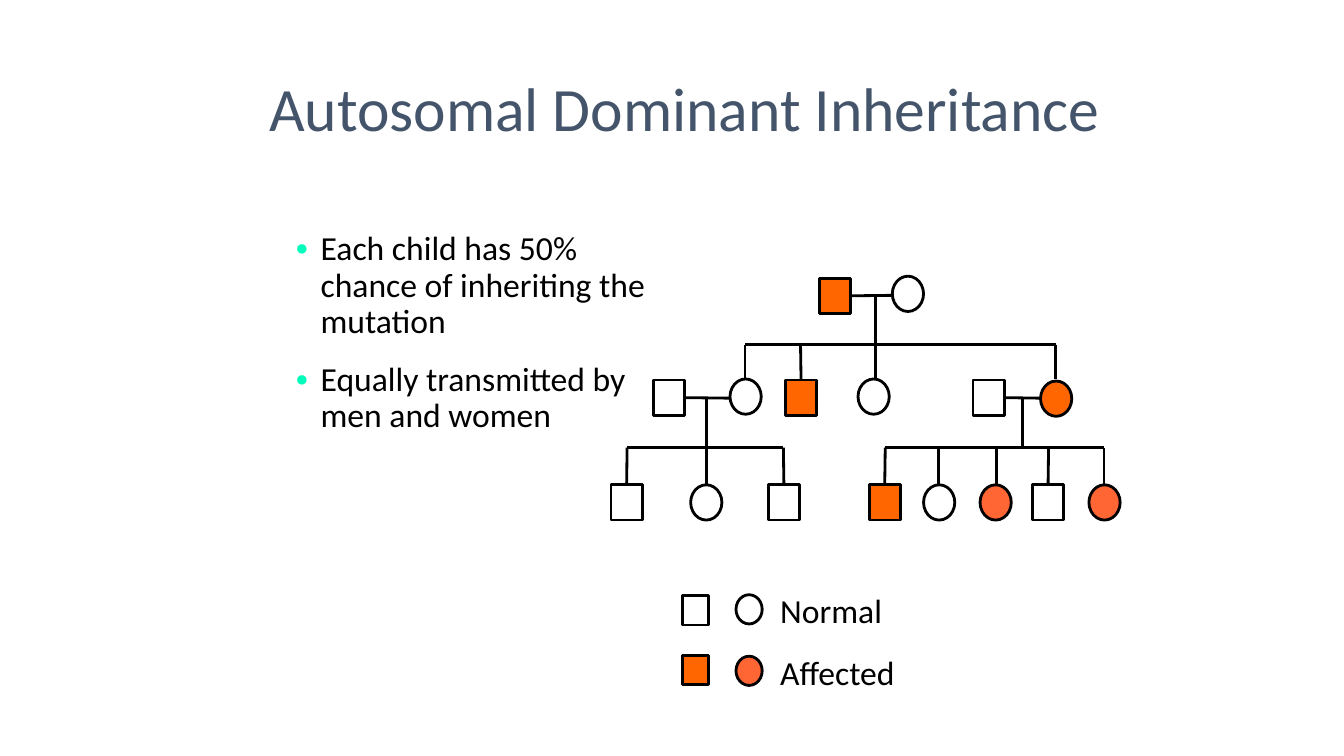
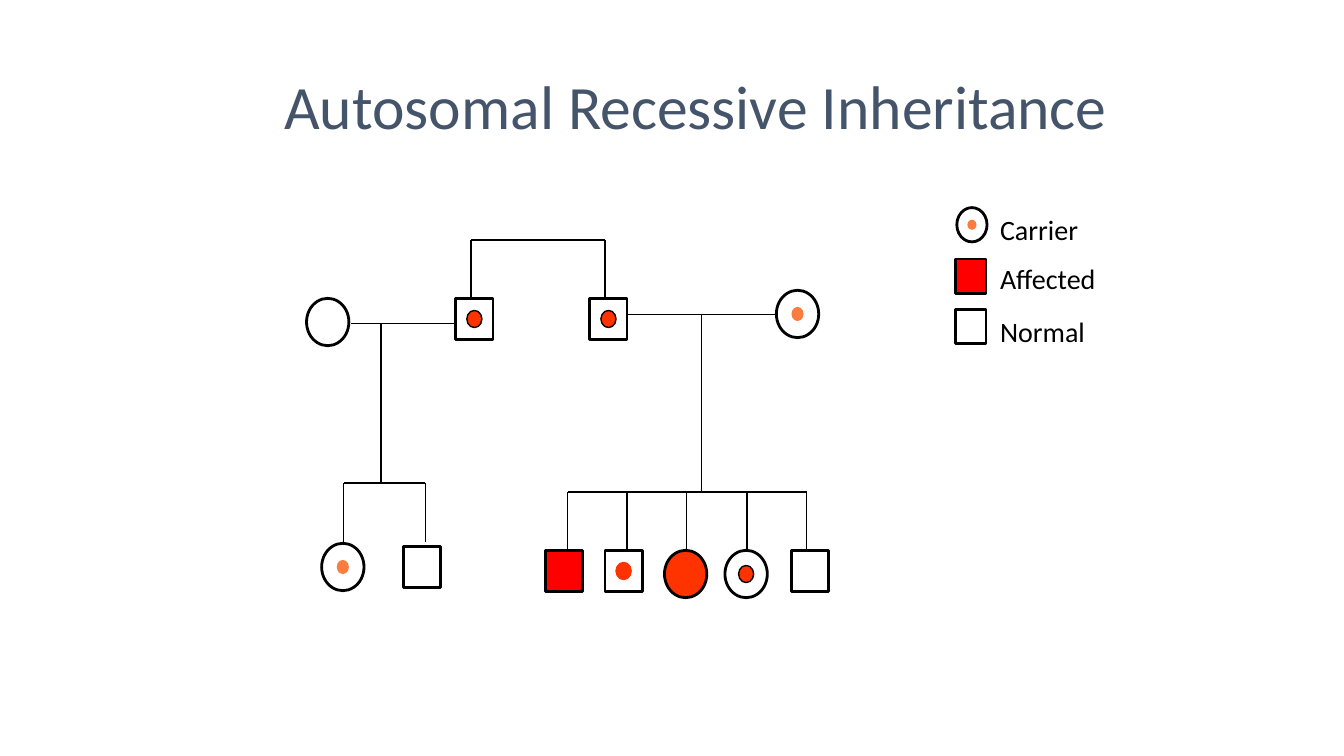
from dataclasses import dataclass
from math import hypot
from typing import Optional

from lxml import etree
from pptx import Presentation
from pptx.dml.color import RGBColor
from pptx.enum import shapes, text
from pptx.oxml import ns
from pptx.util import Inches, Pt

COLORS = {
    "title": "44546A", "ink": "000000", "bullet": "00FCBA",
    "orange": "FF6600", "coral": "FF6633", "red": "FF0000",
    "scarlet": "FF3300", "peach": "FC7B3F",
}
FONT = "Calibri"
SYMBOL_LINE = 2
SNAP = Inches(0.02)
TITLE_AND_CONTENT, TITLE_ONLY = 1, 5
SQUARE, CIRCLE = shapes.MSO_SHAPE.RECTANGLE, shapes.MSO_SHAPE.OVAL


@dataclass(frozen=True)
class Dot:
    width: float
    height: float
    fill: str
    line: Optional[str] = None


@dataclass(frozen=True)
class Person:
    kind: shapes.MSO_SHAPE
    x: float
    y: float
    fill: Optional[str] = None
    dot: Optional[Dot] = None


@dataclass(frozen=True)
class Family:
    """A bar with a drop to each child, and the parents' line and stem if any."""
    bar_y: float
    foot_y: float
    children: tuple[float, ...]
    couple: Optional[tuple[float, float]] = None
    couple_y: float = 0
    stem_x: float = 0


@dataclass(frozen=True)
class Label:
    words: str
    x: float
    y: float
    width: float
    height: float
    size: int


SMALL_DOT = Dot(0.12, 0.14, "peach")
KEY_DOT = Dot(0.09, 0.1, "peach")
RINGED_DOT = Dot(0.15, 0.17, "scarlet", "ink")
PLAIN_DOT = Dot(0.15, 0.17, "scarlet", "scarlet")

DOMINANT_PEOPLE = [
    Person(SQUARE, 8.13, 2.76, "orange"), Person(CIRCLE, 8.85, 2.74),
    Person(SQUARE, 6.48, 3.77), Person(CIRCLE, 7.24, 3.76),
    Person(SQUARE, 7.79, 3.77, "orange"), Person(CIRCLE, 8.51, 3.76),
    Person(SQUARE, 9.65, 3.77), Person(CIRCLE, 10.32, 3.78, "orange"),
    Person(SQUARE, 6.06, 4.81), Person(CIRCLE, 6.85, 4.81),
    Person(SQUARE, 7.62, 4.81), Person(SQUARE, 8.62, 4.81, "orange"),
    Person(CIRCLE, 9.16, 4.81), Person(CIRCLE, 9.72, 4.81, "coral"),
    Person(SQUARE, 10.24, 4.81), Person(CIRCLE, 10.8, 4.81, "coral"),
]
DOMINANT_KEY = [
    Person(SQUARE, 6.77, 5.91), Person(CIRCLE, 7.3, 5.9),
    Person(SQUARE, 6.77, 6.5, "orange"), Person(CIRCLE, 7.3, 6.51, "coral"),
]
DOMINANT_FAMILIES = [
    Family(3.42, 3.76, (7.39, 7.94, 8.68, 10.47), (8.44, 8.85), 2.93, 8.68),
    Family(4.44, 4.81, (6.22, 7.01, 7.77), (6.79, 7.24), 3.95, 7.01),
    Family(4.44, 4.81, (8.78, 9.31, 9.88, 10.4, 10.95),
           (9.96, 10.32), 3.95, 10.14),
]
DOMINANT_LABELS = [
    Label("Normal", 7.64, 5.8, 1.31, 0.5, 24),
    Label("Affected", 7.64, 6.42, 1.37, 0.5, 24),
]
DOMINANT_POINTS = [
    "Each child has 50% chance of inheriting the mutation",
    "Equally transmitted by men and women",
]

RECESSIVE_SQUARES = [
    Person(SQUARE, 4.52, 2.96, dot=RINGED_DOT),
    Person(SQUARE, 5.85, 2.96, dot=RINGED_DOT),
    Person(SQUARE, 4, 5.42), Person(SQUARE, 5.41, 5.46, "red"),
    Person(SQUARE, 6, 5.46, dot=PLAIN_DOT), Person(SQUARE, 7.85, 5.46),
]
RECESSIVE_CIRCLES = [
    Person(CIRCLE, 3.04, 2.96), Person(CIRCLE, 7.7, 2.88, dot=SMALL_DOT),
    Person(CIRCLE, 3.19, 5.39, dot=SMALL_DOT),
    Person(CIRCLE, 6.59, 5.46, "scarlet"),
    Person(CIRCLE, 7.19, 5.46, dot=RINGED_DOT),
]
RECESSIVE_KEY = [
    Person(CIRCLE, 9.49, 2.06, dot=KEY_DOT),
    Person(SQUARE, 9.48, 2.57, "red"), Person(SQUARE, 9.48, 3.07),
]
RECESSIVE_FAMILIES = [
    Family(2.38, 2.96, (4.67, 6)),
    Family(4.79, 5.38, (3.41, 4.22), (3.48, 4.52), 3.21, 3.78),
    Family(4.88, 5.46, (5.63, 6.22, 6.81, 7.41, 8), (6.22, 7.7), 3.12, 6.96),
]
RECESSIVE_LABELS = [
    Label("Carrier", 9.82, 2.06, 0.99, 0.43, 20),
    Label("Affected", 9.82, 2.55, 1.17, 0.43, 20),
    Label("Normal", 9.82, 3.07, 1.06, 0.43, 20),
]


def rgb(name: str) -> RGBColor:
    return RGBColor.from_string(COLORS[name])


def add_bullet(para, indent: float) -> None:
    props = para._p.get_or_add_pPr()
    props.set("marL", str(Inches(indent)))
    props.set("indent", str(-Inches(indent)))
    color = etree.SubElement(props, ns.qn("a:buClr"))
    etree.SubElement(color, ns.qn("a:srgbClr"), val=COLORS["bullet"])
    etree.SubElement(props, ns.qn("a:buSzPct"), val="65000")
    etree.SubElement(props, ns.qn("a:buChar"), char="●")


def write(box, lines: list[str], *, size: int, color: str = "ink",
          anchor=text.MSO_ANCHOR.TOP, spacing: float = 1.0,
          before: float = 0, bullets: bool = False) -> None:
    frame = box.text_frame
    frame.word_wrap = True
    frame.auto_size = text.MSO_AUTO_SIZE.NONE
    frame.vertical_anchor = anchor
    for index, line in enumerate(lines):
        para = frame.add_paragraph() if index else frame.paragraphs[0]
        para.alignment = text.PP_ALIGN.LEFT
        para.line_spacing = spacing
        para.space_before = Pt(before)
        if bullets:
            add_bullet(para, 0.25)
        span = para.add_run()
        span.text = line
        span.font.name = FONT
        span.font.size = Pt(size)
        span.font.color.rgb = rgb(color)


def place(box, x: float, y: float, width: float, height: float) -> None:
    box.left, box.top = Inches(x), Inches(y)
    box.width, box.height = Inches(width), Inches(height)


def add_page(deck, layout: int, title: str, x: float, y: float):
    page = deck.slides.add_slide(deck.slide_layouts[layout])
    place(page.shapes.title, x, y, 8.5, 1.25)
    write(page.shapes.title, [title], size=44, color="title",
          anchor=text.MSO_ANCHOR.MIDDLE, spacing=0.9)
    return page


def add_figure(page, kind, x: float, y: float, width: float, height: float,
               fill: Optional[str], line: Optional[str], weight: float):
    figure = page.shapes.add_shape(
        kind, Inches(x), Inches(y), Inches(width), Inches(height))
    figure.shadow.inherit = False
    if fill:
        figure.fill.solid()
        figure.fill.fore_color.rgb = rgb(fill)
    else:
        figure.fill.background()
    if line:
        figure.line.color.rgb = rgb(line)
        figure.line.width = Pt(weight)
    else:
        figure.line.fill.background()
    return figure


def add_people(page, people: list[Person], width: float, height: float) -> list:
    """Draw the people with their dots and return the squares."""
    squares = []
    for person in people:
        figure = add_figure(page, person.kind, person.x, person.y,
                            width, height, person.fill, "ink", SYMBOL_LINE)
        if person.kind == SQUARE:
            squares.append(figure)
        if person.dot:
            dot = person.dot
            add_figure(page, CIRCLE, person.x + (width - dot.width) / 2,
                       person.y + (height - dot.height) / 2,
                       dot.width, dot.height, dot.fill, dot.line, 1)
    return squares


def find_side(squares: list, x: int, y: int):
    """Return the square and side whose middle lies at the point, if any."""
    for box in squares:
        center, middle = box.left + box.width // 2, box.top + box.height // 2
        sides = ((center, box.top), (box.left, middle),
                 (center, box.top + box.height), (box.left + box.width, middle))
        for side, (side_x, side_y) in enumerate(sides):
            if hypot(side_x - x, side_y - y) <= SNAP:
                return box, side
    return None


def add_line(page, squares: list, start: tuple[float, float],
             end: tuple[float, float], weight: float) -> None:
    points = [Inches(value) for value in (*start, *end)]
    line = page.shapes.add_connector(shapes.MSO_CONNECTOR.STRAIGHT, *points)
    line.line.color.rgb = rgb("ink")
    line.line.width = Pt(weight)
    etree.SubElement(line._element.spPr, ns.qn("a:effectLst"))
    for join, point in ((line.begin_connect, points[:2]),
                        (line.end_connect, points[2:])):
        found = find_side(squares, *point)
        if found:
            join(*found)


def add_family(page, squares: list, family: Family, weight: float) -> None:
    bar, kids = family.bar_y, family.children
    lines = [((kids[0], bar), (kids[-1], bar))]
    lines += [((x, bar), (x, family.foot_y)) for x in kids]
    if family.couple:
        left, right = family.couple
        lines.append(((left, family.couple_y), (right, family.couple_y)))
        lines.append(((family.stem_x, family.couple_y), (family.stem_x, bar)))
    for start, end in lines:
        add_line(page, squares, start, end, weight)


def add_pedigree(page, squares: list, families: list[Family],
                 labels: list[Label], weight: float) -> None:
    for family in families:
        add_family(page, squares, family, weight)
    for label in labels:
        box = page.shapes.add_textbox(Inches(label.x), Inches(label.y),
                                      Inches(label.width), Inches(label.height))
        write(box, [label.words], size=label.size)


def build_dominant(deck) -> None:
    page = add_page(deck, TITLE_AND_CONTENT,
                    "Autosomal Dominant Inheritance", 2.57, 0.48)
    body = page.placeholders[1]
    place(body, 2.83, 2.25, 3.92, 2.18)
    write(body, DOMINANT_POINTS, size=24, spacing=0.9, before=15.6, bullets=True)
    squares = add_people(page, DOMINANT_PEOPLE, 0.31, 0.35)
    add_people(page, DOMINANT_KEY, 0.26, 0.29)
    add_pedigree(page, squares, DOMINANT_FAMILIES, DOMINANT_LABELS, 2)


def build_recessive(deck) -> None:
    page = add_page(deck, TITLE_ONLY,
                    "Autosomal Recessive Inheritance", 2.72, 0.46)
    squares = add_people(page, RECESSIVE_SQUARES, 0.37, 0.41)
    add_people(page, RECESSIVE_CIRCLES, 0.42, 0.47)
    add_people(page, RECESSIVE_KEY, 0.3, 0.34)
    add_pedigree(page, squares, RECESSIVE_FAMILIES, RECESSIVE_LABELS, 1)


def main() -> None:
    deck = Presentation()
    deck.slide_width, deck.slide_height = Inches(13.33), Inches(7.5)
    build_dominant(deck)
    build_recessive(deck)
    deck.save("out.pptx")


if __name__ == "__main__":
    main()
